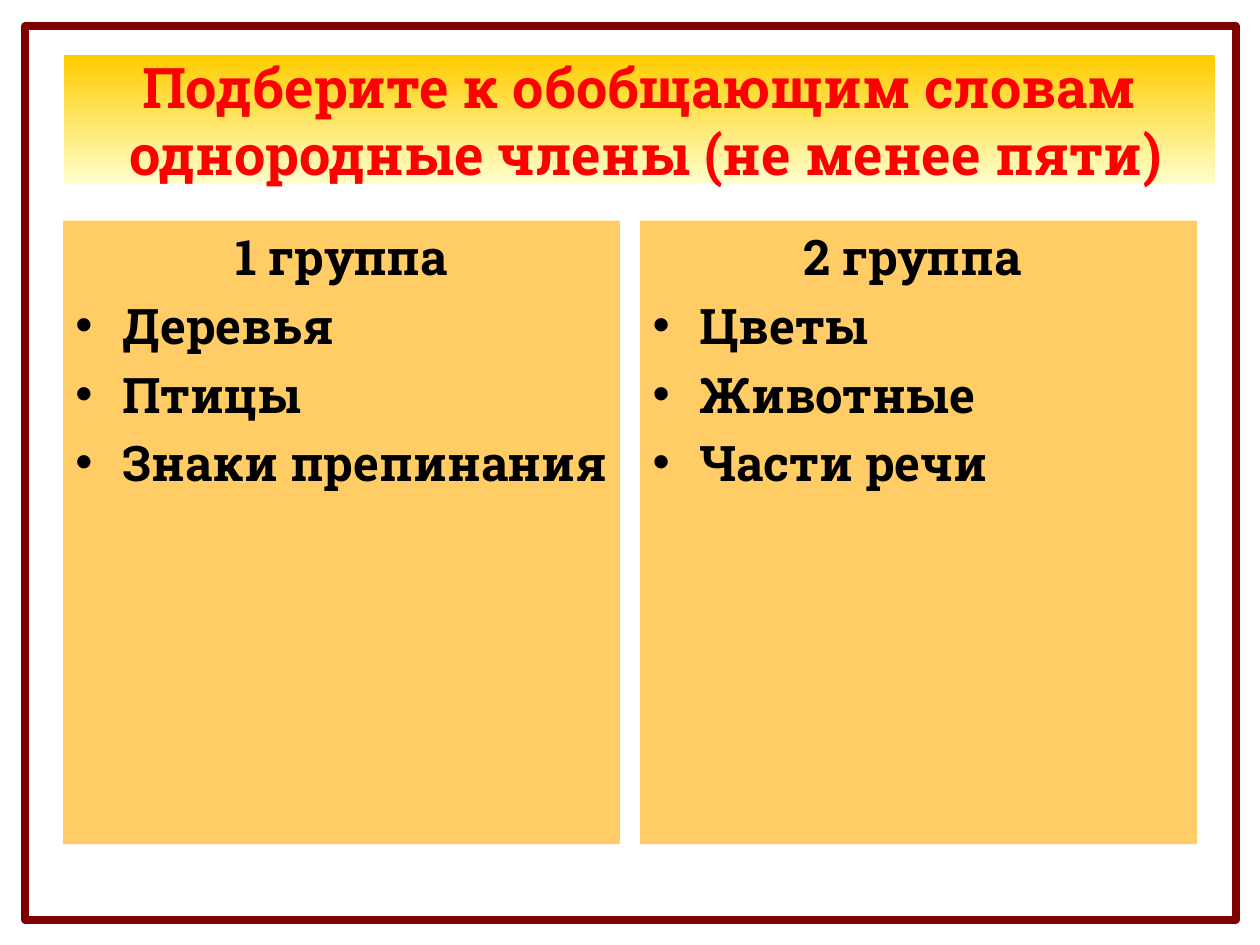
from lxml import etree
from pptx import Presentation
from pptx.dml.color import RGBColor
from pptx.enum.shapes import MSO_SHAPE
from pptx.enum.text import MSO_ANCHOR, MSO_AUTO_SIZE, PP_ALIGN
from pptx.oxml.ns import qn
from pptx.util import Pt

RECTANGLE = MSO_SHAPE.RECTANGLE
TOP, MIDDLE = MSO_ANCHOR.TOP, MSO_ANCHOR.MIDDLE
NO_AUTOFIT = MSO_AUTO_SIZE.NONE
LEFT, CENTER = PP_ALIGN.LEFT, PP_ALIGN.CENTER

FONT = "Roboto Slab"
COLORS = {
    "heading": "FF0000",
    "heading_top": "FFCC00",
    "heading_bottom": "FFFFCC",
    "frame": "800000",
    "panel": "FFCC66",
    "text": "000000",
}
HEADING_LINES = ["Подберите к обобщающим словам", " однородные члены (не менее пяти)"]
GROUPS = [
    ("1 группа", ["Деревья", "Птицы", "Знаки препинания"]),
    ("2 группа ", ["Цветы", "Животные", "Части речи"]),
]
HEADING_BOX = (36.7, 31.7, 657.4, 73.4)
FRAME_BOX = (14.4, 15.1, 691.9, 510.5)
GROUPS_BOX = (36, 126, 648, 356.4)
GROUP_GAP = 11.6
INDENT = 27


def color(name):
    """Return the named palette colour."""
    return RGBColor.from_string(COLORS[name])


def format_paragraph(paragraph, text, size, color_name, align):
    """Fill a paragraph with bold text in the slide's font."""
    paragraph.text = text
    paragraph.alignment = align
    font = paragraph.font
    font.name, font.size, font.bold = FONT, Pt(size), True
    font.color.rgb = color(color_name)


def add_lines(frame, count):
    """Return the given number of paragraphs of a text frame."""
    return [frame.paragraphs[0]] + [frame.add_paragraph() for _ in range(count - 1)]


def place_heading(slide, box):
    """Format the title as a gradient banner in the box."""
    title = slide.shapes.title
    title.left, title.top, title.width, title.height = map(Pt, box)
    title.fill.gradient()
    title.fill.gradient_angle = 270
    for stop, name in zip(title.fill.gradient_stops, ("heading_top", "heading_bottom")):
        stop.color.rgb = color(name)
    frame = title.text_frame
    frame.auto_size = NO_AUTOFIT
    frame.word_wrap = False
    frame.vertical_anchor = MIDDLE
    for paragraph, line in zip(add_lines(frame, len(HEADING_LINES)), HEADING_LINES):
        format_paragraph(paragraph, line, 32, "heading", CENTER)


def add_box(slide, box):
    """Add a rectangle without a shadow."""
    rectangle = slide.shapes.add_shape(RECTANGLE, *map(Pt, box))
    rectangle.shadow.inherit = False
    return rectangle


def add_border(slide, box):
    """Outline the slide along the box."""
    border = add_box(slide, box)
    border.fill.background()
    border.line.color.rgb = color("frame")
    border.line.width = Pt(4.5)


def set_bullet(paragraph, bulleted):
    """Give a paragraph a hanging indent and, if asked, a bullet."""
    properties = paragraph._p.get_or_add_pPr()
    properties.set("marL", str(Pt(INDENT)))
    properties.set("indent", str(-Pt(INDENT)))
    if bulleted:
        etree.SubElement(properties, qn("a:buFont")).set("typeface", "Arial")
        etree.SubElement(properties, qn("a:buChar")).set("char", "•")
    else:
        etree.SubElement(properties, qn("a:buNone"))


def add_group(slide, box, name, topics):
    """Add a panel with a centred group name above its bulleted topics."""
    panel = add_box(slide, box)
    panel.fill.solid()
    panel.fill.fore_color.rgb = color("panel")
    panel.line.fill.background()
    frame = panel.text_frame
    frame.word_wrap = True
    frame.vertical_anchor = TOP
    lines = [name, *topics]
    for index, paragraph in enumerate(add_lines(frame, len(lines))):
        paragraph.space_before = Pt(5.6)
        set_bullet(paragraph, index > 0)
        format_paragraph(paragraph, lines[index], 28, "text", LEFT if index else CENTER)


def add_groups(slide, box):
    """Share the box equally among the group panels."""
    left, top, width, height = box
    panel_width = (width - GROUP_GAP * (len(GROUPS) - 1)) / len(GROUPS)
    for index, (name, topics) in enumerate(GROUPS):
        panel_left = left + index * (panel_width + GROUP_GAP)
        add_group(slide, (panel_left, top, panel_width, height), name, topics)


def main():
    """Build and save the slide."""
    presentation = Presentation()
    presentation.slide_width, presentation.slide_height = Pt(720), Pt(540)
    slide = presentation.slides.add_slide(presentation.slide_layouts.get_by_name("Title Only"))
    place_heading(slide, HEADING_BOX)
    add_border(slide, FRAME_BOX)
    add_groups(slide, GROUPS_BOX)
    presentation.save("out.pptx")


if __name__ == "__main__":
    main()
